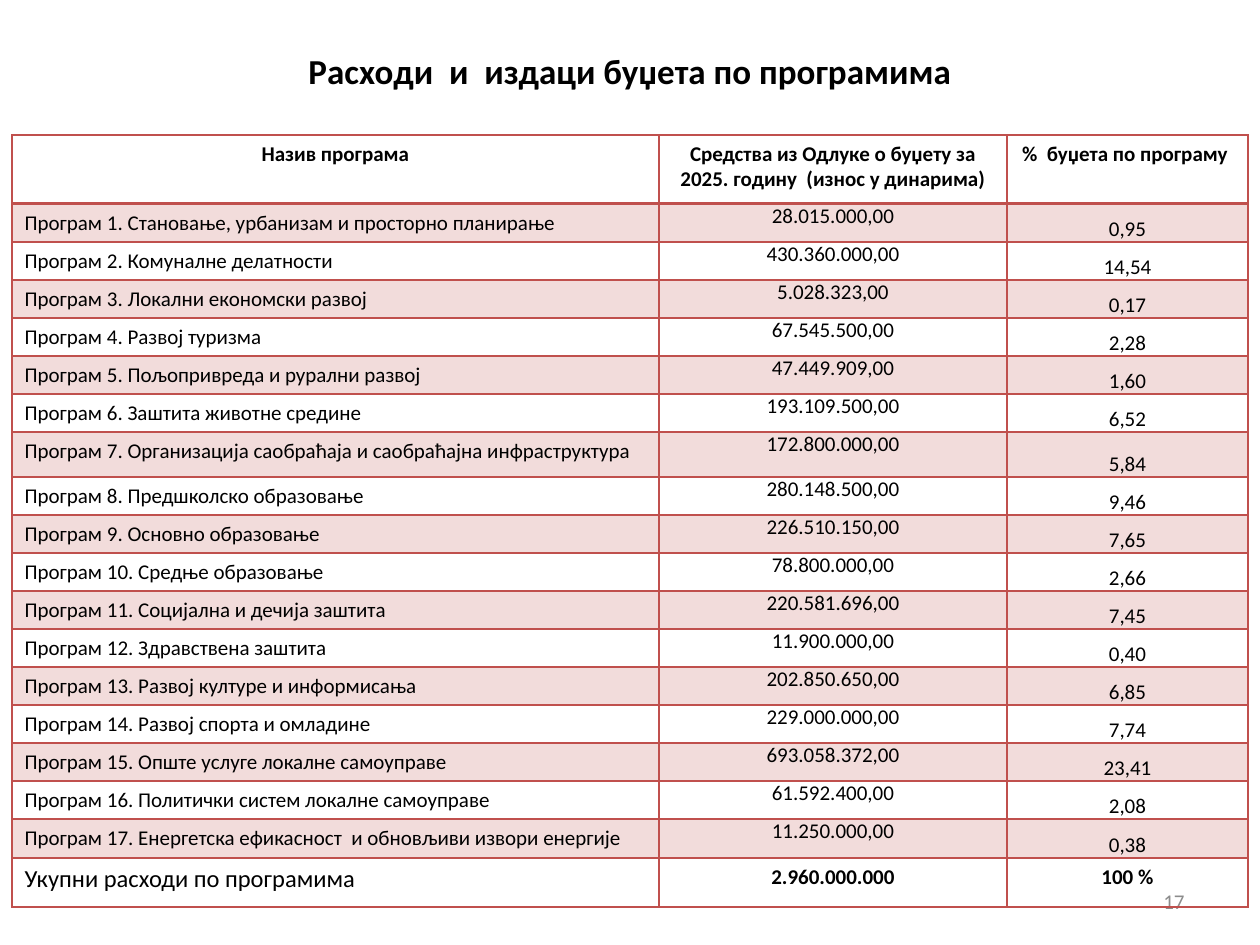
from lxml import etree
from pptx import Presentation
from pptx import util as u
from pptx.dml.color import RGBColor
from pptx.enum import text
from pptx.oxml import ns

PX = 914400 // 126
FONT = "Calibri"
BLACK = RGBColor(0x00, 0x00, 0x00)
GREY = RGBColor(0x8C, 0x8C, 0x8C)
RED = RGBColor(0xC0, 0x50, 0x4D)
BAND_OPACITY = 20

COLUMN_WIDTHS = (647, 348, 241)
HEADER_HEIGHT, ROW_HEIGHT, TOTAL_HEIGHT = 69, 38, 49
TALLER_ROWS = {7: 45, 17: 39}

HEADINGS = (
    "Назив програма",
    "Средства из Одлуке о буџету за 2025. годину  (износ у динарима)",
    "%  буџета по програму ",
)
PROGRAMS = (
    ("Становање, урбанизам и просторно планирање", "28.015.000,00", "0,95"),
    ("Комуналне делатности", "430.360.000,00", "14,54"),
    ("Локални економски развој", "5.028.323,00", "0,17"),
    ("Развој туризма", "67.545.500,00", "2,28"),
    ("Пољопривреда и рурални развој", "47.449.909,00", "1,60"),
    ("Заштита животне средине", "193.109.500,00", "6,52"),
    ("Организација саобраћаја и саобраћајна инфраструктура", "172.800.000,00", "5,84"),
    ("Предшколско образовање", "280.148.500,00", "9,46"),
    ("Основно образовање", "226.510.150,00", "7,65"),
    ("Средње образовање", "78.800.000,00", "2,66"),
    ("Социјална и дечија заштита", "220.581.696,00", "7,45"),
    ("Здравствена заштита", "11.900.000,00", "0,40"),
    ("Развој културе и информисања", "202.850.650,00", "6,85"),
    ("Развој спорта и омладине", "229.000.000,00", "7,74"),
    ("Опште услуге локалне самоуправе", "693.058.372,00", "23,41"),
    ("Политички систем локалне самоуправе", "61.592.400,00", "2,08"),
    ("Енергетска ефикасност  и обновљиви извори енергије", "11.250.000,00", "0,38"),
)
TOTALS = ("Укупни расходи по програмима", "2.960.000.000", "100 %")

LEFT, CENTER, RIGHT = text.PP_ALIGN.LEFT, text.PP_ALIGN.CENTER, text.PP_ALIGN.RIGHT


def emu(box):
    return [length * PX for length in box]


def write(frame, words, size, align, bold=False, color=BLACK):
    paragraph = frame.paragraphs[0]
    paragraph.alignment = align
    run = paragraph.add_run()
    run.text = words
    run.font.name = FONT
    run.font.size = u.Pt(size)
    run.font.bold = bold
    run.font.color.rgb = color


def add_line_of_text(slide, box, words, size, align, **style):
    frame = slide.shapes.add_textbox(*emu(box)).text_frame
    frame.word_wrap = True
    frame.vertical_anchor = text.MSO_ANCHOR.MIDDLE
    write(frame, words, size, align, **style)


def set_borders(cell, bottom=1):
    """Draw the four edges; they must precede the fill in the cell properties."""
    properties = cell._tc.get_or_add_tcPr()
    widths = {"lnL": 1, "lnR": 1, "lnT": 1, "lnB": bottom}
    for place, (edge, width) in enumerate(widths.items()):
        line = etree.Element(ns.qn(f"a:{edge}"), w=str(u.Pt(width)))
        solid = etree.SubElement(line, ns.qn("a:solidFill"))
        etree.SubElement(solid, ns.qn("a:srgbClr"), val=str(RED))
        properties.insert(place, line)


def set_fill(cell, banded):
    if not banded:
        cell.fill.background()
        return
    cell.fill.solid()
    cell.fill.fore_color.rgb = RED
    color = cell._tc.tcPr.find(".//" + ns.qn("a:solidFill") + "/" + ns.qn("a:srgbClr"))
    etree.SubElement(color, ns.qn("a:alpha"), val=str(BAND_OPACITY * 1000))


def set_margins(cell, side, top, bottom):
    cell.margin_left = cell.margin_right = side * PX
    cell.margin_top, cell.margin_bottom = top * PX, bottom * PX


def fill_header(cells):
    for cell, heading in zip(cells, HEADINGS):
        set_fill(cell, False)
        set_borders(cell, bottom=2)
        write(cell.text_frame, heading, 12, CENTER, bold=True)


def fill_program(cells, number, program):
    title, amount, share = program
    for cell in cells:
        set_fill(cell, number % 2 == 1)
        set_borders(cell, bottom=1)
    name_cell, amount_cell, share_cell = cells
    write(name_cell.text_frame, f"Програм {number}. {title}", 12, LEFT)
    set_margins(amount_cell, 0, 0, 0)
    write(amount_cell.text_frame, amount, 12, CENTER)
    set_margins(share_cell, 1, 1, 0)
    share_cell.vertical_anchor = text.MSO_ANCHOR.BOTTOM
    write(share_cell.text_frame, share, 12, CENTER)


def fill_totals(cells):
    for cell in cells:
        set_fill(cell, False)
        set_borders(cell)
    label, *figures = TOTALS
    write(cells[0].text_frame, label, 14, LEFT)
    for cell, figure in zip(cells[1:], figures):
        write(cell.text_frame, figure, 12, CENTER, bold=True)


def add_budget_table(slide, left, top):
    heights = [HEADER_HEIGHT]
    heights += [TALLER_ROWS.get(n, ROW_HEIGHT) for n in range(1, len(PROGRAMS) + 1)]
    heights.append(TOTAL_HEIGHT)
    box = (left, top, sum(COLUMN_WIDTHS), sum(heights))
    table = slide.shapes.add_table(len(heights), len(COLUMN_WIDTHS), *emu(box)).table
    table.first_row = table.horz_banding = False
    for column, width in zip(table.columns, COLUMN_WIDTHS):
        column.width = width * PX
    for row, height in zip(table.rows, heights):
        row.height = height * PX

    header, *programs, totals = [list(row.cells) for row in table.rows]
    fill_header(header)
    for number, (cells, program) in enumerate(zip(programs, PROGRAMS), 1):
        fill_program(cells, number, program)
    fill_totals(totals)


def main():
    deck = Presentation()
    deck.slide_width, deck.slide_height = u.Inches(10), u.Inches(7.5)
    slide = deck.slides.add_slide(deck.slide_layouts[6])
    add_line_of_text(slide, (93, 17, 1074, 107), "Расходи  и  издаци буџета по програмима",
                     20, CENTER, bold=True)
    add_line_of_text(slide, (903, 876, 294, 50), "17", 12, RIGHT, color=GREY)
    add_budget_table(slide, 12, 135)
    deck.save("out.pptx")


if __name__ == "__main__":
    main()
